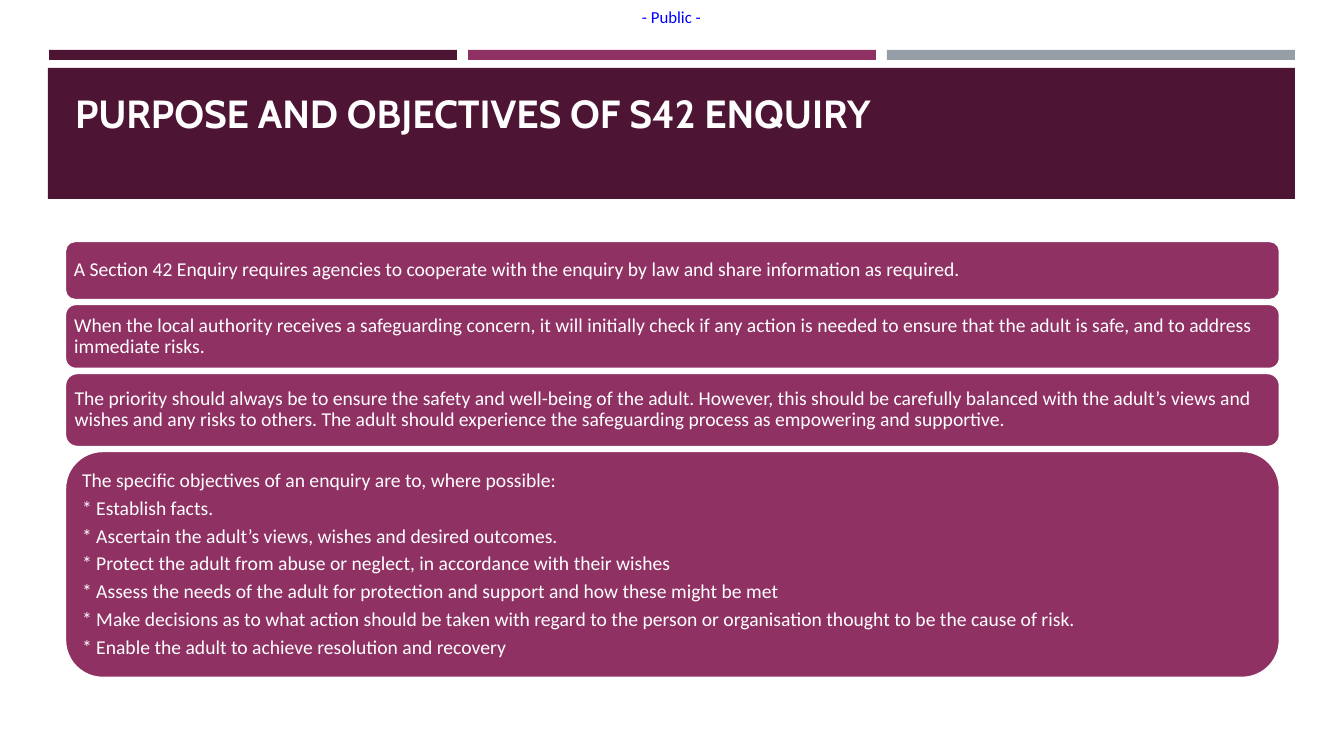
from pptx import Presentation
from pptx import util as u
from pptx.dml.color import RGBColor
from pptx.enum import shapes, text

# Content
MARKING = "- Public -"
TITLE = "PURPOSE AND OBJECTIVES OF S42 ENQUIRY\v"
PANELS = [  # height in px, paragraphs
    (59, ["A Section 42 Enquiry requires agencies to cooperate with the enquiry by law "
          "and share information as required."]),
    (65, ["When the local authority receives a safeguarding concern, it will initially "
          "check if any action is needed to ensure that the adult is safe, and to address "
          "immediate risks."]),
    (74, ["The priority should always be to ensure the safety and well-being of the adult. "
          "However, this should be carefully balanced with the adult’s views and wishes and "
          "any risks to others. The adult should experience the safeguarding process as "
          "empowering and supportive."]),
    (227, ["The specific objectives of an enquiry are to, where possible:",
           "* Establish facts.",
           "* Ascertain the adult’s views, wishes and desired outcomes.",
           "* Protect the adult from abuse or neglect, in accordance with their wishes",
           "* Assess the needs of the adult for protection and support and how these might be met",
           "* Make decisions as to what action should be taken with regard to the person or "
           "organisation thought to be the cause of risk.",
           "* Enable the adult to achieve resolution and recovery"]),
]

PLUM = RGBColor(0x4D, 0x14, 0x34)
BERRY = RGBColor(0x90, 0x31, 0x63)
GREY = RGBColor(0x96, 0x9F, 0xA7)
BLUE = RGBColor(0x00, 0x00, 0xFF)
WHITE = RGBColor(0xFF, 0xFF, 0xFF)
TITLE_WHITE = RGBColor(0xFF, 0xFE, 0xFF)


def px(length):
    return u.Emu(round(length * 914400 / 100.8))


def add_block(page, kind, left, top, width, height, fill, outline=None):
    block = page.shapes.add_shape(kind, px(left), px(top), px(width), px(height))
    block.shadow.inherit = False
    block.fill.solid()
    block.fill.fore_color.rgb = fill
    if outline is None:
        block.line.fill.background()
    else:
        block.line.color.rgb = outline
        block.line.width = u.Pt(1.75)
    return block


def write(box, lines, *, size, color, font="Calibri", bold=False, inset=0,
          align=text.PP_ALIGN.LEFT, anchor=text.MSO_ANCHOR.MIDDLE,
          spacing=1.0, after=0, wrap=True):
    frame = box.text_frame
    frame.text = "\n".join(lines)
    frame.word_wrap = wrap
    frame.auto_size = text.MSO_AUTO_SIZE.NONE
    frame.vertical_anchor = anchor
    frame.margin_left = frame.margin_right = px(inset)
    frame.margin_top = frame.margin_bottom = px(min(inset, 6))
    for para in frame.paragraphs:
        para.alignment = align
        para.line_spacing = spacing
        para.space_after = u.Pt(after)
        para.font.size = u.Pt(size)
        for span in para.runs:
            span.font.name = font
            span.font.size = u.Pt(size)
            span.font.bold = bold
            span.font.color.rgb = color


def main():
    deck = Presentation()
    deck.slide_width, deck.slide_height = px(1344), px(756)
    page = deck.slides.add_slide(deck.slide_layouts[5])

    # Three bars and the title band
    for column, color in enumerate((PLUM, BERRY, GREY)):
        add_block(page, shapes.MSO_SHAPE.RECTANGLE, 49 + 419 * column, 50, 408, 10, color)
    band = add_block(page, shapes.MSO_SHAPE.RECTANGLE, 48, 68, 1247, 131, PLUM)

    # Title, in front of its band
    title = page.shapes.title
    band.element.addnext(title.element)
    title.left, title.top, title.width, title.height = map(px, (65, 78, 1215, 112))
    write(title, [TITLE], size=28, color=TITLE_WHITE, font="Cabin", bold=True,
          inset=10, anchor=text.MSO_ANCHOR.BOTTOM, spacing=0.9)

    # Marking at the top
    marking = page.shapes.add_textbox(px(642), px(7), px(62), px(20))
    write(marking, [MARKING], size=12, color=BLUE, wrap=False,
          anchor=text.MSO_ANCHOR.TOP)

    # Stacked panels
    top, gap = 241, 4
    for height, lines in PANELS:
        panel = add_block(page, shapes.MSO_SHAPE.ROUNDED_RECTANGLE,
                          65, top, 1215, height, BERRY, WHITE)
        write(panel, lines, size=14, color=WHITE, inset=6, spacing=0.9, after=4.7)
        top += height + gap

    deck.save("out.pptx")


if __name__ == "__main__":
    main()
